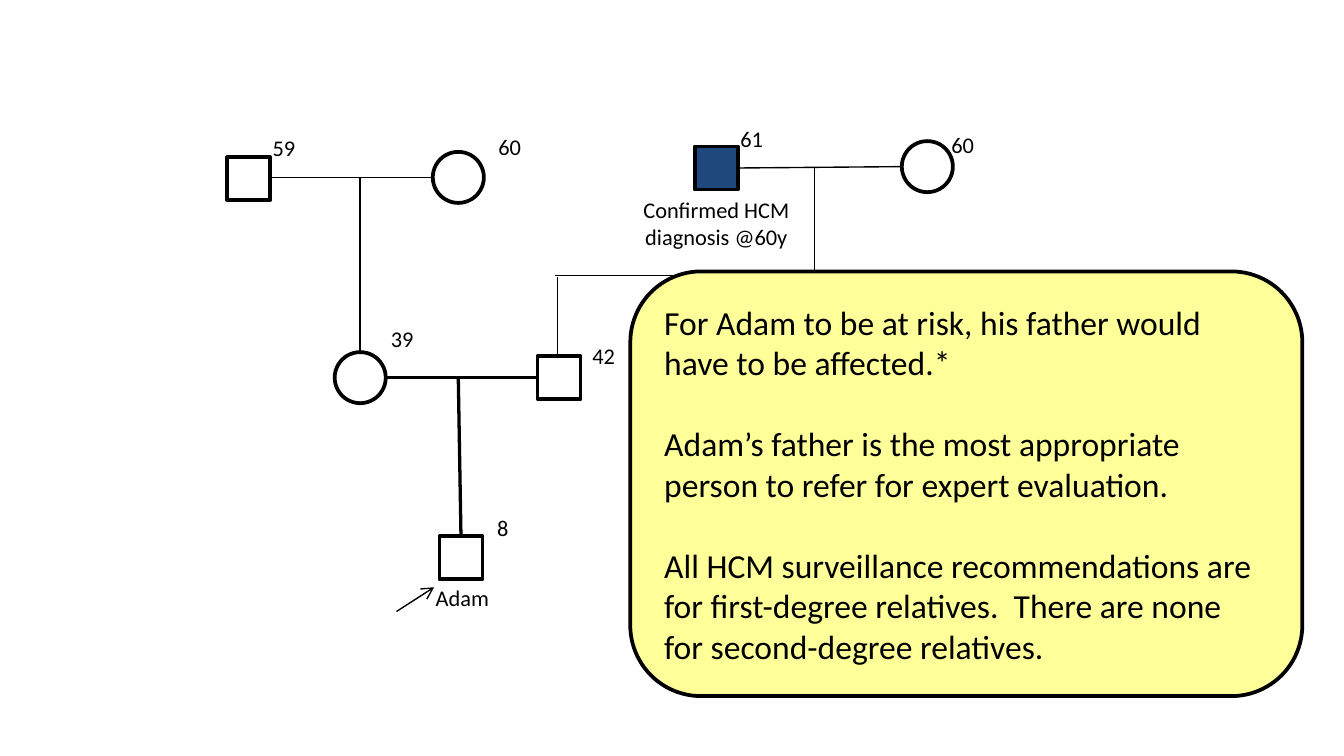
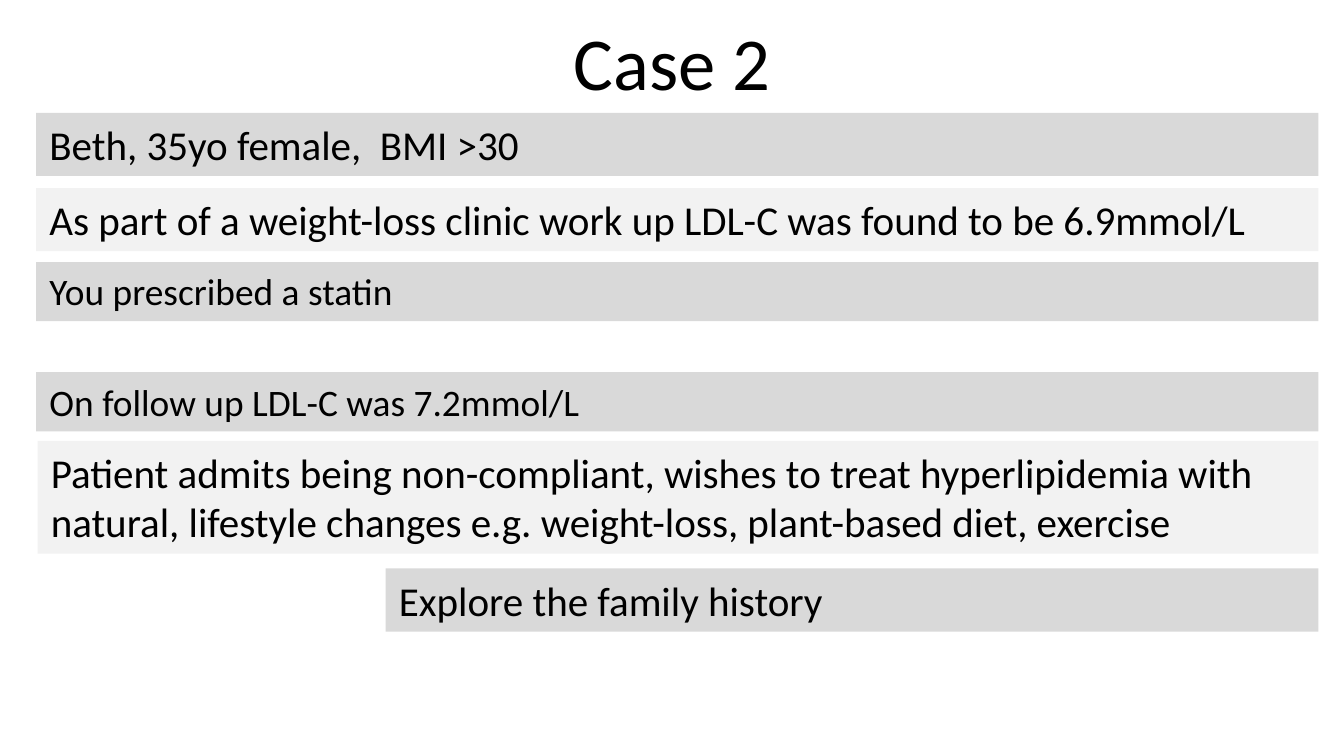
from dataclasses import dataclass

from lxml import etree
from pptx import Presentation
from pptx.dml.color import RGBColor
from pptx.enum.shapes import MSO_CONNECTOR, MSO_SHAPE
from pptx.enum.text import MSO_ANCHOR, MSO_AUTO_SIZE, PP_ALIGN
from pptx.oxml.ns import qn
from pptx.util import Inches, Pt

RECTANGLE, OVAL = MSO_SHAPE.RECTANGLE, MSO_SHAPE.OVAL
ROUNDED = MSO_SHAPE.ROUNDED_RECTANGLE
STRAIGHT = MSO_CONNECTOR.STRAIGHT
LEFT, CENTER = PP_ALIGN.LEFT, PP_ALIGN.CENTER
TOP, MIDDLE = MSO_ANCHOR.TOP, MSO_ANCHOR.MIDDLE
NO_FIT, GROW = MSO_AUTO_SIZE.NONE, MSO_AUTO_SIZE.SHAPE_TO_FIT_TEXT


@dataclass(frozen=True)
class Theme:
    font: str = "Calibri"
    ink: RGBColor = RGBColor(0x00, 0x00, 0x00)
    affected: RGBColor = RGBColor(0x1F, 0x49, 0x7D)
    callout: RGBColor = RGBColor(0xFF, 0xFF, 0x99)
    dark_bar: RGBColor = RGBColor(0xD9, 0xD9, 0xD9)
    light_bar: RGBColor = RGBColor(0xF2, 0xF2, 0xF2)
    title_size: int = 40
    bar_size: int = 22
    small_bar_size: int = 20
    callout_size: int = 18
    label_size: int = 12
    outline: float = 2


THEME = Theme()


def write_text(shape, *texts, size, align=LEFT, anchor=TOP, fit=GROW, gap=0):
    """Write one paragraph per text, with a gap in points between them."""
    frame = shape.text_frame
    frame.word_wrap = True
    frame.auto_size = fit
    frame.vertical_anchor = anchor
    for index, text in enumerate(texts):
        paragraph = frame.add_paragraph() if index else frame.paragraphs[0]
        paragraph.alignment = align
        paragraph.space_before = Pt(gap if index else 0)
        run = paragraph.add_run()
        run.text = text
        run.font.name = THEME.font
        run.font.size = Pt(size)
        run.font.color.rgb = THEME.ink


def add_box(slide, kind, left, top, width, height, fill=None, outline=None):
    shape = slide.shapes.add_shape(
        kind, Inches(left), Inches(top), Inches(width), Inches(height))
    shape.shadow.inherit = False
    if fill is None:
        shape.fill.background()
    else:
        shape.fill.solid()
        shape.fill.fore_color.rgb = fill
    if outline is None:
        shape.line.fill.background()
    else:
        shape.line.color.rgb = THEME.ink
        shape.line.width = Pt(outline)
    return shape


# Widescreen page, 16:9
presentation = Presentation()
presentation.slide_width = Inches(10)
presentation.slide_height = Inches(10 * 9 / 16)
title_only, blank = presentation.slide_layouts[5], presentation.slide_layouts[6]

# Slide 1: family tree
slide = presentation.slides.add_slide(blank)

# Relationship lines: start x, start y, end x, end y, width
relationships = [
    (2.00, 1.32, 3.22, 1.32, 0.75),  # mother's parents
    (2.68, 2.62, 2.68, 1.32, 0.75),
    (5.49, 1.25, 6.71, 1.24, 0.75),  # father's parents
    (6.06, 1.25, 6.06, 2.05, 0.75),
    (7.95, 2.05, 4.13, 2.05, 0.75),
    (4.15, 2.06, 4.15, 2.65, 0.5),
    (2.87, 2.81, 4.00, 2.81, 1.75),  # Adam's parents
    (3.41, 2.81, 3.43, 3.99, 1.75),
]
adam_pointer = (2.95, 4.55, 3.23, 4.37, 0.75)
for start_x, start_y, end_x, end_y, width in relationships + [adam_pointer]:
    connector = slide.shapes.add_connector(
        STRAIGHT, Inches(start_x), Inches(start_y), Inches(end_x), Inches(end_y))
    connector.line.color.rgb = THEME.ink
    connector.line.width = Pt(width)
    etree.SubElement(connector.element.spPr, qn("a:effectLst"))
# The last connector points at Adam
pointer_line = connector.element.spPr.find(qn("a:ln"))
etree.SubElement(pointer_line, qn("a:tailEnd"), type="arrow")

# Men are squares, women are circles; only the affected grandfather is filled
MAN, WOMAN = (RECTANGLE, 0.32), (OVAL, 0.38)
people = [
    (MAN, 1.69, 1.17, None),
    (WOMAN, 3.22, 1.13, None),
    (MAN, 5.17, 1.09, THEME.affected),
    (WOMAN, 6.71, 1.05, None),
    (WOMAN, 2.49, 2.62, None),
    (MAN, 4.00, 2.65, None),
    (MAN, 3.27, 3.99, None),
]
for (kind, side), left, top, fill in people:
    add_box(slide, kind, left, top, side, side, fill, THEME.outline)

# Ages, name and diagnosis
labels = [
    ("59", 1.93, 0.95, 0.46, 0.3, LEFT),
    ("60", 3.61, 0.94, 0.47, 0.3, LEFT),
    ("61", 5.41, 0.88, 0.47, 0.3, LEFT),
    ("60", 6.98, 0.93, 0.47, 0.3, LEFT),
    ("39", 2.81, 2.37, 0.63, 0.3, LEFT),
    ("42", 4.31, 2.50, 0.47, 0.3, LEFT),
    ("8", 3.60, 3.78, 0.34, 0.3, LEFT),
    ("Adam", 3.10, 4.30, 0.68, 0.3, CENTER),
    ("Confirmed HCM diagnosis @60y", 4.59, 1.41, 1.48, 0.51, CENTER),
]
for text, left, top, width, height, align in labels:
    label = slide.shapes.add_textbox(
        Inches(left), Inches(top), Inches(width), Inches(height))
    write_text(label, text, size=THEME.label_size, align=align)

# Callout over the tree
callout = add_box(slide, ROUNDED, 4.69, 2.02, 5, 3.16, THEME.callout, THEME.outline)
write_text(
    callout,
    "For Adam to be at risk, his father would have to be affected.*",
    "Adam’s father is the most appropriate person to refer for expert evaluation.",
    "All HCM surveillance recommendations are for first-degree relatives.  "
    "There are none for second-degree relatives.",
    size=THEME.callout_size, anchor=MIDDLE, fit=NO_FIT, gap=22)

# Slide 2: case history
slide = presentation.slides.add_slide(title_only)
title = slide.shapes.title
title.left, title.top = Inches(0.5), Inches(-0.02)
title.width, title.height = Inches(9), Inches(0.94)
write_text(title, "Case 2", size=THEME.title_size, align=CENTER,
           anchor=MIDDLE, fit=NO_FIT)

# Bars share their right edge: text, left, top, height, fill, size
BAR_RIGHT = 9.81
bars = [
    ("Beth, 35yo female,  BMI >30",
     0.27, 0.84, 0.47, THEME.dark_bar, THEME.bar_size),
    ("As part of a weight-loss clinic work up LDL-C was found to be 6.9mmol/L",
     0.27, 1.40, 0.47, THEME.light_bar, THEME.bar_size),
    ("You prescribed a statin",
     0.27, 1.95, 0.44, THEME.dark_bar, THEME.small_bar_size),
    ("On follow up LDL-C was 7.2mmol/L",
     0.27, 2.77, 0.44, THEME.dark_bar, THEME.small_bar_size),
    ("Patient admits being non-compliant, wishes to treat hyperlipidemia with "
     "natural, lifestyle changes e.g. weight-loss, plant-based diet, exercise",
     0.28, 3.28, 0.84, THEME.light_bar, THEME.bar_size),
    ("Explore the family history",
     2.87, 4.23, 0.47, THEME.dark_bar, THEME.bar_size),
]
for text, left, top, height, fill, size in bars:
    bar = add_box(slide, RECTANGLE, left, top, BAR_RIGHT - left, height, fill)
    write_text(bar, text, size=size)

presentation.save("out.pptx")
